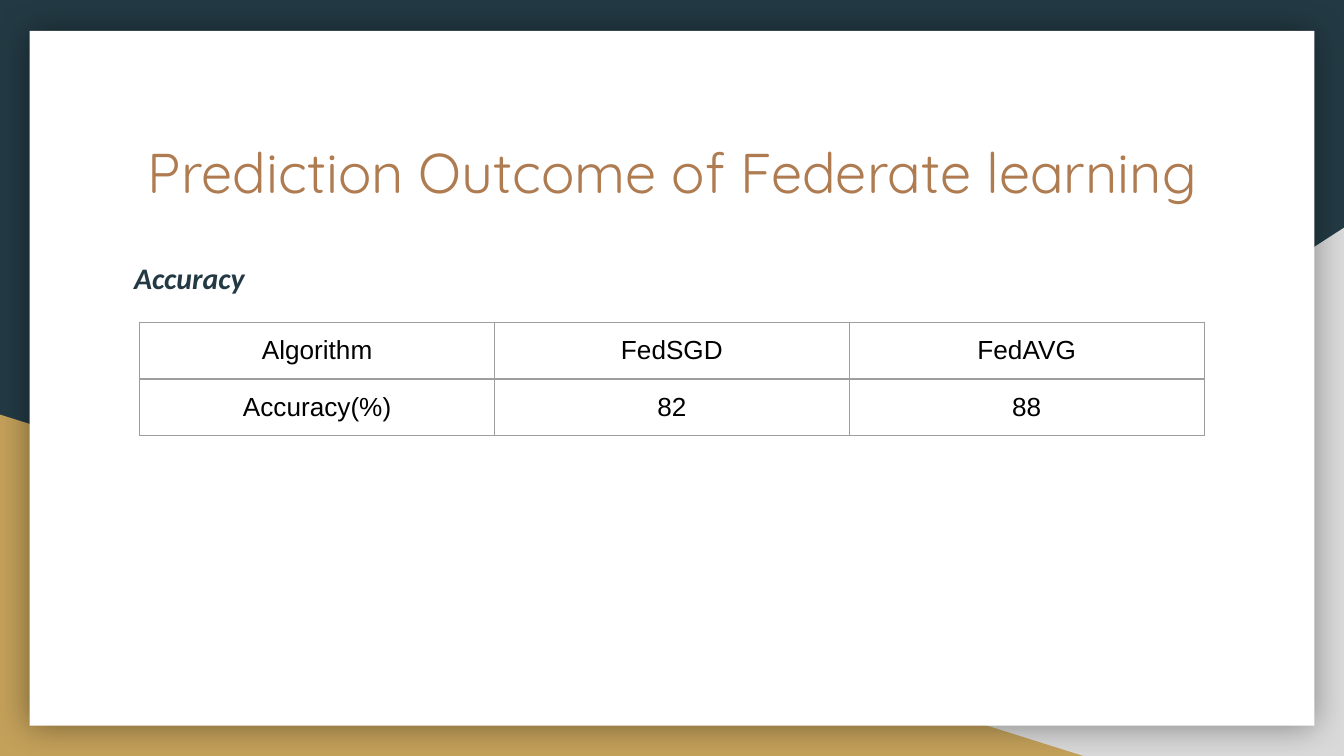
from lxml import etree
from pptx import Presentation
from pptx import util as u
from pptx.dml.color import RGBColor
from pptx.enum import shapes, text
from pptx.oxml import parse_xml
from pptx.oxml.ns import nsdecls, qn

NAVY = RGBColor(0x23, 0x3A, 0x44)
GOLD = RGBColor(0xC4, 0xA1, 0x5A)
GRAY = RGBColor(0xD9, 0xD9, 0xD9)
BROWN = RGBColor(0xAF, 0x7B, 0x51)
WHITE = RGBColor(0xFF, 0xFF, 0xFF)
BLACK = RGBColor(0, 0, 0)
BORDER = RGBColor(0x9E, 0x9E, 0x9E)

WIDTH = 10
HEIGHT = WIDTH * 9 / 16
MARGIN = 0.9
PAD = u.Inches(0.1)
ROWS = [["Algorithm", "FedSGD", "FedAVG"], ["Accuracy(%)", "82", "88"]]


def box(left, top, width, height):
    return [u.Inches(v) for v in (left, top, width, height)]


def write(tf, words, font, size, color, align=text.PP_ALIGN.CENTER,
          spacing=1.0, bold=False, italic=False):
    p = tf.paragraphs[0]
    p.alignment, p.line_spacing = align, spacing
    r = p.add_run()
    r.text = words
    r.font.name, r.font.size = font, u.Pt(size)
    r.font.bold, r.font.italic = bold, italic
    r.font.color.rgb = color


def set_frame(tf):
    tf.word_wrap = True
    tf.auto_size = text.MSO_AUTO_SIZE.NONE
    tf.vertical_anchor = text.MSO_ANCHOR.TOP
    tf.margin_left = tf.margin_right = tf.margin_top = tf.margin_bottom = PAD


def add_panel(s, kind, bounds, color, flip=False):
    sp = s.shapes.add_shape(kind, *box(*bounds))
    sp.shadow.inherit = False
    sp.fill.solid()
    sp.fill.fore_color.rgb = color
    sp.line.fill.background()
    if flip:
        sp._element.spPr.find(qn("a:xfrm")).set("flipH", "1")
    return sp


def add_glow_shadow(sp, blur, alpha):
    effects = sp._element.spPr.find(qn("a:effectLst"))
    effects.append(parse_xml(
        f'<a:outerShdw {nsdecls("a")} blurRad="{u.Pt(blur)}" dist="0" dir="0" '
        f'algn="ctr" rotWithShape="0"><a:srgbClr val="{BLACK}">'
        f'<a:alpha val="{alpha * 1000}"/></a:srgbClr></a:outerShdw>'))


def add_background(s):
    s.background.fill.solid()
    s.background.fill.fore_color.rgb = NAVY
    triangle = shapes.MSO_SHAPE.RIGHT_TRIANGLE
    # Triangles sit in the two lower corners
    add_panel(s, triangle, (WIDTH - 6.08, HEIGHT - 3.93, 6.08, 3.93), GRAY, flip=True)
    add_panel(s, triangle, (0, HEIGHT - 2.54, 8.06, 2.54), GOLD)
    card = add_panel(s, shapes.MSO_SHAPE.RECTANGLE,
                     (0.22, 0.23, WIDTH - 0.44, 5.17), WHITE)
    add_glow_shadow(card, blur=18, alpha=40)


def add_title(s, words):
    title = s.shapes.title
    title.left, title.top, title.width, title.height = box(MARGIN, 0.92, 8.21, 0.73)
    s.shapes._spTree.append(title._element)  # bring above the card
    set_frame(title.text_frame)
    write(title.text_frame, words, "Quicksand", 30, BROWN)


def add_borders(cell):
    tc_pr = cell._tc.get_or_add_tcPr()
    for side in ("lnL", "lnR", "lnT", "lnB"):
        ln = etree.SubElement(tc_pr, qn(f"a:{side}"), w=str(u.Pt(0.75)))
        fill = etree.SubElement(ln, qn("a:solidFill"))
        etree.SubElement(fill, qn("a:srgbClr"), val=str(BORDER))


def add_accuracy_table(s, rows, left, top, col_width, row_height):
    n_rows, n_cols = len(rows), len(rows[0])
    table = s.shapes.add_table(n_rows, n_cols, *box(
        left, top, n_cols * col_width, n_rows * row_height)).table
    table.first_row = table.horz_banding = False
    for i, row in enumerate(rows):
        for j, words in enumerate(row):
            cell = table.cell(i, j)
            cell.margin_left = cell.margin_right = cell.margin_top = PAD
            cell.margin_bottom = u.Inches(0.09)  # keeps the row at its set height
            add_borders(cell)
            cell.fill.background()
            write(cell.text_frame, words, "Arial", 14, BLACK)


def main():
    prs = Presentation()
    prs.slide_width, prs.slide_height = u.Inches(WIDTH), u.Inches(HEIGHT)
    s = prs.slides.add_slide(prs.slide_layouts[5])

    add_background(s)
    add_title(s, "Prediction Outcome of Federate learning")

    # Section label above the table
    label = s.shapes.add_textbox(*box(MARGIN, 1.79, 8.21, 3.06))
    set_frame(label.text_frame)
    write(label.text_frame, "Accuracy", "Calibri", 16, NAVY,
          align=text.PP_ALIGN.LEFT, spacing=1.15, bold=True, italic=True)

    add_accuracy_table(s, ROWS, left=1.04, top=2.4, col_width=2.64, row_height=0.42)
    prs.save("out.pptx")


if __name__ == "__main__":
    main()
